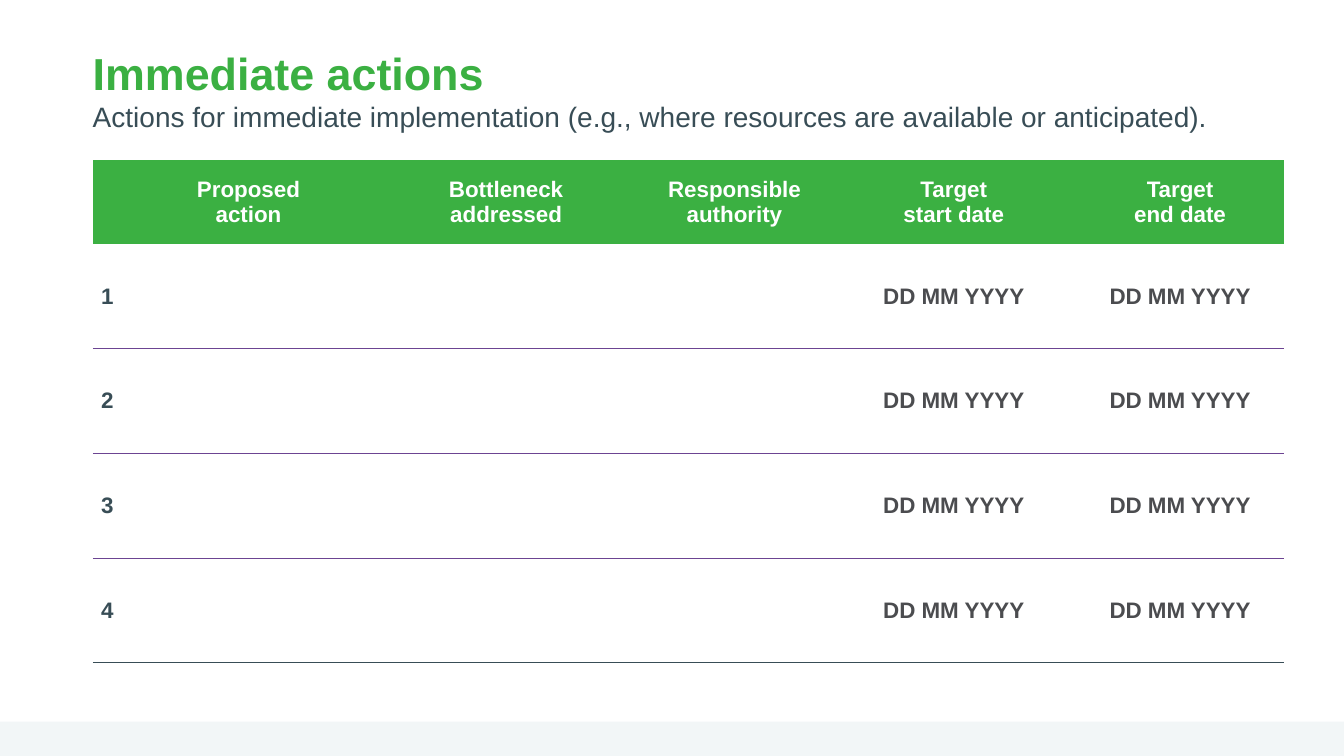
from dataclasses import dataclass
from typing import Optional

from lxml.etree import SubElement
from pptx import Presentation
from pptx.dml.color import RGBColor
from pptx.enum.shapes import MSO_SHAPE
from pptx.enum.text import MSO_ANCHOR, PP_ALIGN
from pptx.oxml.ns import qn
from pptx.util import Inches, Pt

GREEN = RGBColor(0x3B, 0xB0, 0x42)
SLATE = RGBColor(0x38, 0x4D, 0x56)
GREY = RGBColor(0x4B, 0x4C, 0x4F)
PURPLE = RGBColor(0x6C, 0x44, 0x92)
PALE = RGBColor(0xF2, 0xF6, 0xF7)
WHITE = RGBColor(0xFF, 0xFF, 0xFF)
FONT = "Arial"


@dataclass
class Column:
    heading: str
    width: float
    entry: str = ""


COLUMNS = [
    Column("", 0.29),
    Column("Proposed\vaction", 2.51),
    Column("Bottleneck\naddressed", 2.6),
    Column("Responsible authority", 1.93),
    Column("Target\vstart date", 2.42, "DD MM YYYY"),
    Column("Target\vend date", 2.07, "DD MM YYYY"),
]
ROW_HEIGHTS = [0.83, 1.04, 1.04, 1.04, 1.03]


def style_font(font, size: float, color: RGBColor, bold: bool) -> None:
    font.name = FONT
    font.size = Pt(size)
    font.bold = bold
    font.color.rgb = color


def set_borders(cell, top: Optional[RGBColor], bottom: Optional[RGBColor]) -> None:
    """Border lines have to precede the fill in the cell properties."""
    properties = cell._tc.get_or_add_tcPr()
    for tag, color in (("a:lnL", None), ("a:lnR", None), ("a:lnT", top), ("a:lnB", bottom)):
        line = SubElement(properties, qn(tag), w=str(Pt(1)))
        if color is None:
            SubElement(line, qn("a:noFill"))
        else:
            fill = SubElement(line, qn("a:solidFill"))
            SubElement(fill, qn("a:srgbClr"), val=str(color))


def fill_cell(cell, text: str, color: RGBColor, side: float, end: float) -> None:
    cell.vertical_anchor = MSO_ANCHOR.MIDDLE
    cell.margin_left = cell.margin_right = Inches(side)
    cell.margin_top = cell.margin_bottom = Inches(end)
    cell.text_frame.text = text
    for paragraph in cell.text_frame.paragraphs:
        paragraph.alignment = PP_ALIGN.CENTER
        for run in paragraph.runs:
            style_font(run.font, 16, color, True)


def add_footer_band(slide) -> None:
    band = slide.shapes.add_shape(
        MSO_SHAPE.RECTANGLE, 0, Inches(7.16), Inches(13.33), Inches(0.34))
    band.shadow.inherit = False
    band.fill.solid()
    band.fill.fore_color.rgb = PALE
    band.line.fill.background()


def add_title(slide) -> None:
    box = slide.shapes.add_textbox(Inches(0.92), Inches(0.4), Inches(11.5), Inches(1.19))
    frame = box.text_frame
    frame.word_wrap = True
    frame.margin_left = frame.margin_right = frame.margin_bottom = 0
    frame.margin_top = Inches(0.05)
    paragraph = frame.paragraphs[0]
    paragraph.text = ("Immediate actions\vActions for immediate implementation "
                      "(e.g., where resources are available or anticipated).")
    heading, subtitle = paragraph.runs
    style_font(heading.font, 32, GREEN, True)
    style_font(subtitle.font, 20, SLATE, False)


def add_action_table(slide) -> None:
    table = slide.shapes.add_table(
        len(ROW_HEIGHTS), len(COLUMNS), Inches(0.92), Inches(1.59),
        Inches(sum(column.width for column in COLUMNS)), Inches(sum(ROW_HEIGHTS))).table
    table.first_row = table.horz_banding = False
    for row, height in zip(table.rows, ROW_HEIGHTS):
        row.height = Inches(height)

    last = len(ROW_HEIGHTS) - 1
    for index, column in enumerate(COLUMNS):
        table.columns[index].width = Inches(column.width)

        # Heading row
        header = table.cell(0, index)
        set_borders(header, None, None)
        header.fill.solid()
        header.fill.fore_color.rgb = GREEN
        fill_cell(header, column.heading, WHITE, 0.07, 0)

        # Numbered action rows
        for number in range(1, last + 1):
            cell = table.cell(number, index)
            set_borders(cell, PURPLE if number > 1 else None,
                        SLATE if number == last else PURPLE)
            cell.fill.background()
            text, color = (str(number), SLATE) if index == 0 else (column.entry, GREY)
            fill_cell(cell, text, color, 0.05, 0.05)


def main() -> None:
    presentation = Presentation()
    presentation.slide_width = Inches(13.33)
    presentation.slide_height = Inches(7.5)
    slide = presentation.slides.add_slide(presentation.slide_layouts[6])
    add_footer_band(slide)
    add_title(slide)
    add_action_table(slide)
    presentation.save("out.pptx")


if __name__ == "__main__":
    main()
